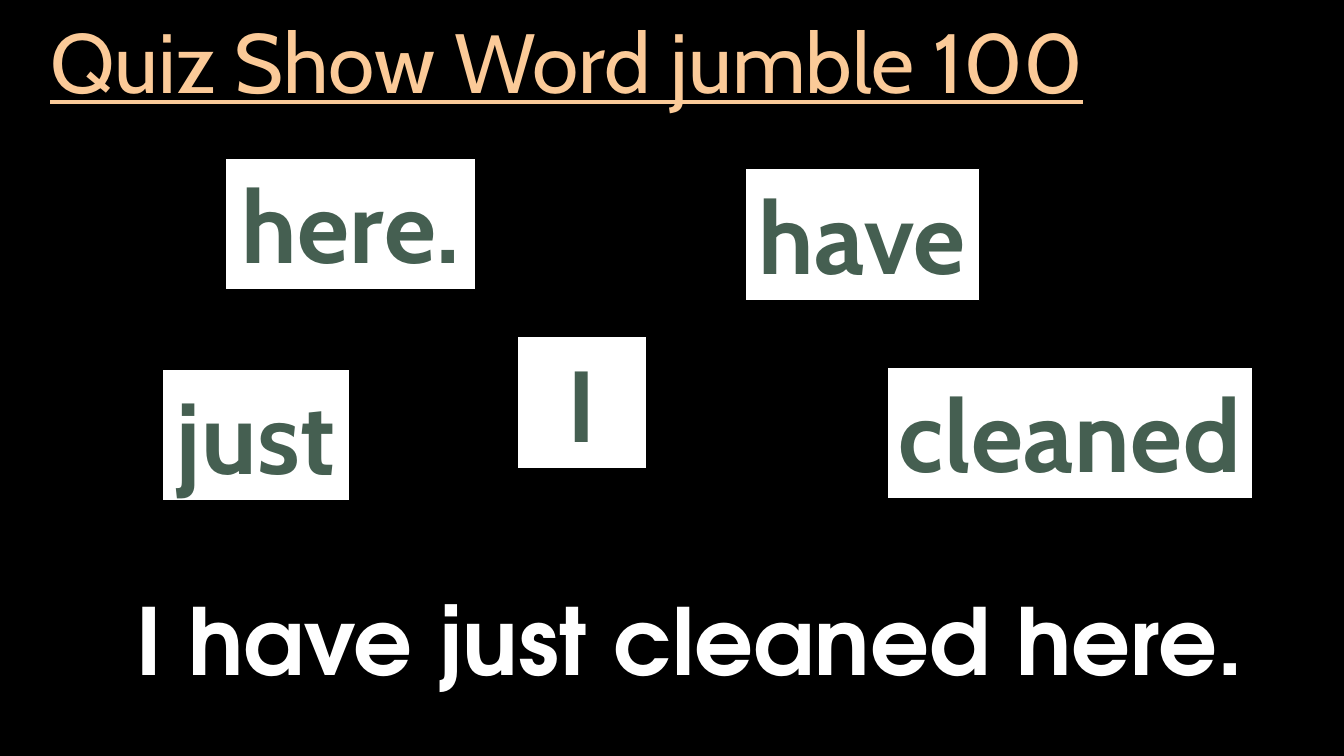
from pptx import Presentation
from pptx.dml.color import RGBColor
from pptx.enum.shapes import MSO_SHAPE
from pptx.enum.text import MSO_ANCHOR, MSO_AUTO_SIZE, PP_ALIGN
from pptx.util import Pt

BLACK = RGBColor(0x00, 0x00, 0x00)
WHITE = RGBColor(0xFF, 0xFF, 0xFF)
PEACH = RGBColor(0xFB, 0xCA, 0x98)
GREEN = RGBColor(0x45, 0x5F, 0x51)

CARD_HEIGHT = 94.3
# word, left, top, width, wraps
CARDS = [
    ("here.", 161.3, 113, 178.6, False),
    ("have", 532.1, 120.2, 167.8, False),
    ("I", 369.4, 240.5, 92.2, True),
    ("cleaned", 633.6, 262.1, 261.4, False),
    ("just", 115.9, 263.5, 133.9, False),
]


def add_text(tf, text, size, font, color, bold=False):
    p = tf.paragraphs[0]
    r = p.add_run()
    r.text = text
    r.font.size = Pt(size)
    r.font.name = font
    r.font.bold = bold
    r.font.color.rgb = color
    return p, r


def add_title(s, left, top, width, height):
    tf = s.shapes.add_textbox(Pt(left), Pt(top), Pt(width), Pt(height)).text_frame
    tf.word_wrap = True
    tf.vertical_anchor = MSO_ANCHOR.MIDDLE
    p, r = add_text(tf, "Quiz Show Word jumble 100", 60, "Cabin", PEACH)
    p.line_spacing = 0.9
    r.font.underline = True


def add_word_card(s, word, left, top, width, wraps):
    sp = s.shapes.add_shape(MSO_SHAPE.RECTANGLE, Pt(left), Pt(top), Pt(width), Pt(CARD_HEIGHT))
    sp.shadow.inherit = False
    sp.fill.solid()
    sp.fill.fore_color.rgb = WHITE
    sp.line.color.rgb = BLACK
    sp.line.width = Pt(1)
    tf = sp.text_frame
    tf.word_wrap = wraps
    tf.auto_size = MSO_AUTO_SIZE.SHAPE_TO_FIT_TEXT
    tf.vertical_anchor = MSO_ANCHOR.TOP
    p, r = add_text(tf, word, 72, "Cabin", GREEN, bold=True)
    p.alignment = PP_ALIGN.CENTER
    r._r.get_or_add_rPr().set("spc", "50")


def add_answer(s, left, top, width, height):
    tf = s.shapes.add_textbox(Pt(left), Pt(top), Pt(width), Pt(height)).text_frame
    tf.word_wrap = False
    tf.auto_size = MSO_AUTO_SIZE.SHAPE_TO_FIT_TEXT
    p, r = add_text(tf, "I have just cleaned here.", 66, "TeX Gyre Adventor", WHITE, bold=True)
    p.alignment = PP_ALIGN.CENTER


def main():
    prs = Presentation()
    prs.slide_width, prs.slide_height = Pt(960), Pt(540)
    s = prs.slides.add_slide(prs.slide_layouts[6])
    s.background.fill.solid()
    s.background.fill.fore_color.rgb = BLACK
    add_title(s, 28.8, 11.5, 820, 71.3)
    for card in CARDS:
        add_word_card(s, *card)
    add_answer(s, 85, 412.6, 815.8, 87.1)
    prs.save("out.pptx")


if __name__ == "__main__":
    main()
